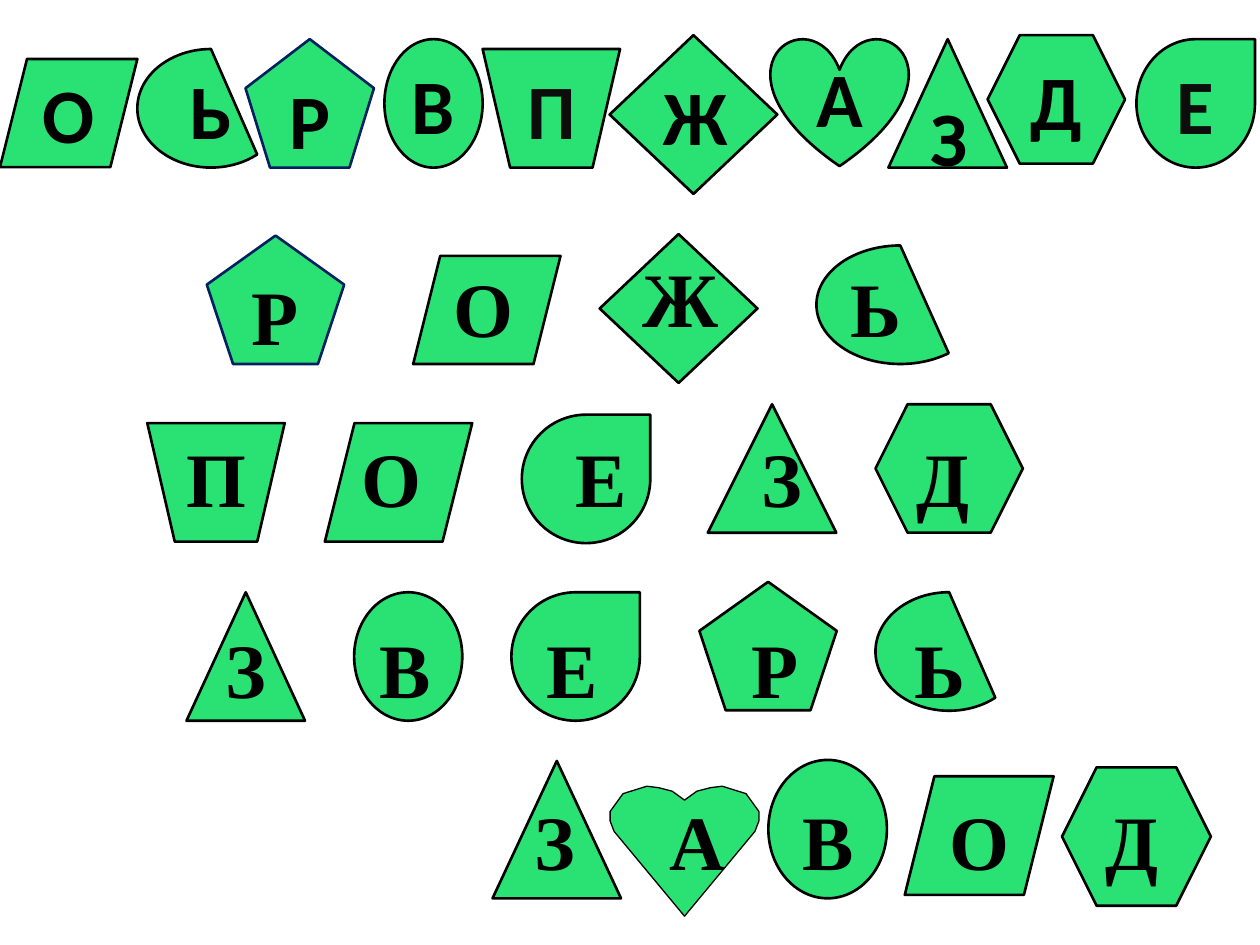
"""Builds a letter-puzzle slide: shapes with letters and the words they spell."""
from pptx import Presentation
from pptx.dml.color import RGBColor
from pptx.enum.shapes import MSO_SHAPE
from pptx.enum.text import MSO_ANCHOR, PP_ALIGN
from pptx.util import Cm, Pt

CENTER, LEFT = PP_ALIGN.CENTER, PP_ALIGN.LEFT
MIDDLE, TOP = MSO_ANCHOR.MIDDLE, MSO_ANCHOR.TOP

THEME = {
    "green": "2AE274", "black": "000000", "soft_black": "0D0D0D", "navy": "002060",
    "key_font": "Calibri", "word_font": "Times New Roman",
    "letter_size": 44, "outline": 1.5, "thin_outline": 0.75,
}

LETTER_SHAPES = {
    "О": MSO_SHAPE.PARALLELOGRAM,
    "Ь": MSO_SHAPE.CHORD,
    "Р": MSO_SHAPE.REGULAR_PENTAGON,
    "В": MSO_SHAPE.OVAL,
    "П": MSO_SHAPE.FLOWCHART_MANUAL_OPERATION,
    "Ж": MSO_SHAPE.DIAMOND,
    "А": MSO_SHAPE.HEART,
    "З": MSO_SHAPE.ISOSCELES_TRIANGLE,
    "Д": MSO_SHAPE.HEXAGON,
    "Е": MSO_SHAPE.TEAR,
}

KEY = [
    ("О", 0, 1.19, 2.77, 2.18), ("Ь", 2.77, 0.99, 2.97, 2.39),
    ("Р", 4.95, 0.79, 2.59, 2.59), ("В", 7.75, 0.79, 1.98, 2.59),
    ("П", 9.73, 0.99, 2.77, 2.39), ("Ж", 12.29, 0.71, 3.38, 3.2),
    ("А", 15.54, 0.76, 2.77, 2.59), ("З", 17.91, 0.79, 2.39, 2.59),
    ("Д", 19.91, 0.71, 2.77, 2.59), ("Е", 22.91, 0.79, 2.39, 2.59),
]
SOFT_LETTERS = "ПЕ"

WORD_SHAPES = [
    ("Р", 4.17, 4.75, 2.77, 2.59), ("О", 8.33, 5.16, 2.97, 2.18),
    ("Ж", 12.09, 4.72, 3.18, 3), ("Ь", 16.46, 4.95, 3.38, 2.39),
    ("П", 2.97, 8.53, 2.77, 2.39), ("О", 6.55, 8.53, 2.97, 2.39),
    ("Е", 10.52, 8.36, 2.59, 2.59), ("З", 14.27, 8.15, 2.59, 2.59),
    ("Д", 17.65, 8.15, 2.97, 2.59),
    ("З", 3.76, 11.94, 2.39, 2.59), ("В", 7.14, 11.94, 2.18, 2.59),
    ("Е", 10.31, 11.94, 2.59, 2.59), ("Р", 14.1, 11.73, 2.77, 2.59),
    ("Ь", 17.65, 11.94, 2.97, 2.39),
    ("З", 9.93, 15.34, 2.59, 2.77), ("В", 15.49, 15.32, 2.39, 2.79),
    ("О", 18.24, 15.65, 3, 2.39), ("Д", 21.41, 15.47, 3, 2.79),
]
NAVY_WORD_SHAPE = WORD_SHAPES[0]

HEART_CENTER = 13.8
HEART_HALF = [(0, 16.13), (0.25, 15.95), (0.52, 15.88), (0.76, 15.85), (1.24, 16),
              (1.5, 16.36), (1.5, 16.55), (1.42, 16.76), (0, 18.47)]

WORD_LETTERS = [
    ("О", 8.89, 5.13, 1.6, []),
    ("Ж", 12.7, 4.93, 1.8, []),
    ("Ь", 16.89, 5.13, 2.01, []),
    ("ПОЕЗД", 3.51, 8.56, 17.4, [3.53, 7.85, 11.6, 14.72]),
    ("ЗВЕРЬ", 4.29, 12.4, 16, [3.12, 6.48, 10.62, 13.9]),
    ("ЗАВОД", 10.52, 15.88, 13.89, [2.73, 5.4, 8.38, 11.52]),
]
WORD_HEIGHT = 2.11


def write(frame, text, font="word_font", color="black", align=LEFT, anchor=TOP, tabs=()):
    frame.word_wrap = True
    frame.vertical_anchor = anchor
    paragraph = frame.paragraphs[0]
    paragraph.text = text
    paragraph.alignment = align
    if tabs:
        properties = paragraph._p.get_or_add_pPr()
        stops = properties.makeelement(properties.tag.replace("}pPr", "}tabLst"), {})
        properties.append(stops)
        for position in tabs:
            stop = stops.makeelement(stops.tag.replace("tabLst", "tab"),
                                     {"pos": str(Cm(position)), "algn": "l"})
            stops.append(stop)
    letter = paragraph.runs[0].font if not tabs else paragraph.font
    for style in [letter] + [run.font for run in paragraph.runs]:
        style.name = THEME[font]
        style.size = Pt(THEME["letter_size"])
        style.bold = True
        style.color.rgb = RGBColor.from_string(THEME[color])


def paint(figure, line="black", width="outline"):
    figure.shadow.inherit = False
    figure.fill.solid()
    figure.fill.fore_color.rgb = RGBColor.from_string(THEME["green"])
    figure.line.color.rgb = RGBColor.from_string(THEME[line])
    figure.line.width = Pt(THEME[width])


def add_figure(slide, letter, *box, line="black"):
    figure = slide.shapes.add_shape(LETTER_SHAPES[letter], *map(Cm, box))
    paint(figure, line)
    return figure


def add_word_heart(slide):
    left = [(Cm(HEART_CENTER - dx), Cm(y)) for dx, y in HEART_HALF]
    right = [(Cm(HEART_CENTER + dx), Cm(y)) for dx, y in HEART_HALF[-2:0:-1]]
    builder = slide.shapes.build_freeform(*left[0])
    builder.add_line_segments(left[1:] + right, close=True)
    paint(builder.convert_to_shape(), width="thin_outline")


def main():
    deck = Presentation()
    deck.slide_width, deck.slide_height = Cm(25.4), Cm(19.05)
    slide = deck.slides.add_slide(deck.slide_layouts[6])

    for letter, *box in KEY:
        figure = add_figure(slide, letter, *box, line="navy" if letter == "Р" else "black")
        write(figure.text_frame, letter, font="key_font", align=CENTER, anchor=MIDDLE,
              color="soft_black" if letter in SOFT_LETTERS else "black")

    for entry in WORD_SHAPES:
        figure = add_figure(slide, *entry, line="navy" if entry is NAVY_WORD_SHAPE else "black")
        if entry is NAVY_WORD_SHAPE:
            write(figure.text_frame, entry[0], align=CENTER, anchor=MIDDLE)
    add_word_heart(slide)

    for word, left, top, width, tabs in WORD_LETTERS:
        label = slide.shapes.add_textbox(Cm(left), Cm(top), Cm(width), Cm(WORD_HEIGHT))
        write(label.text_frame, "\t".join(word), tabs=tabs)

    deck.save("out.pptx")


if __name__ == "__main__":
    main()
